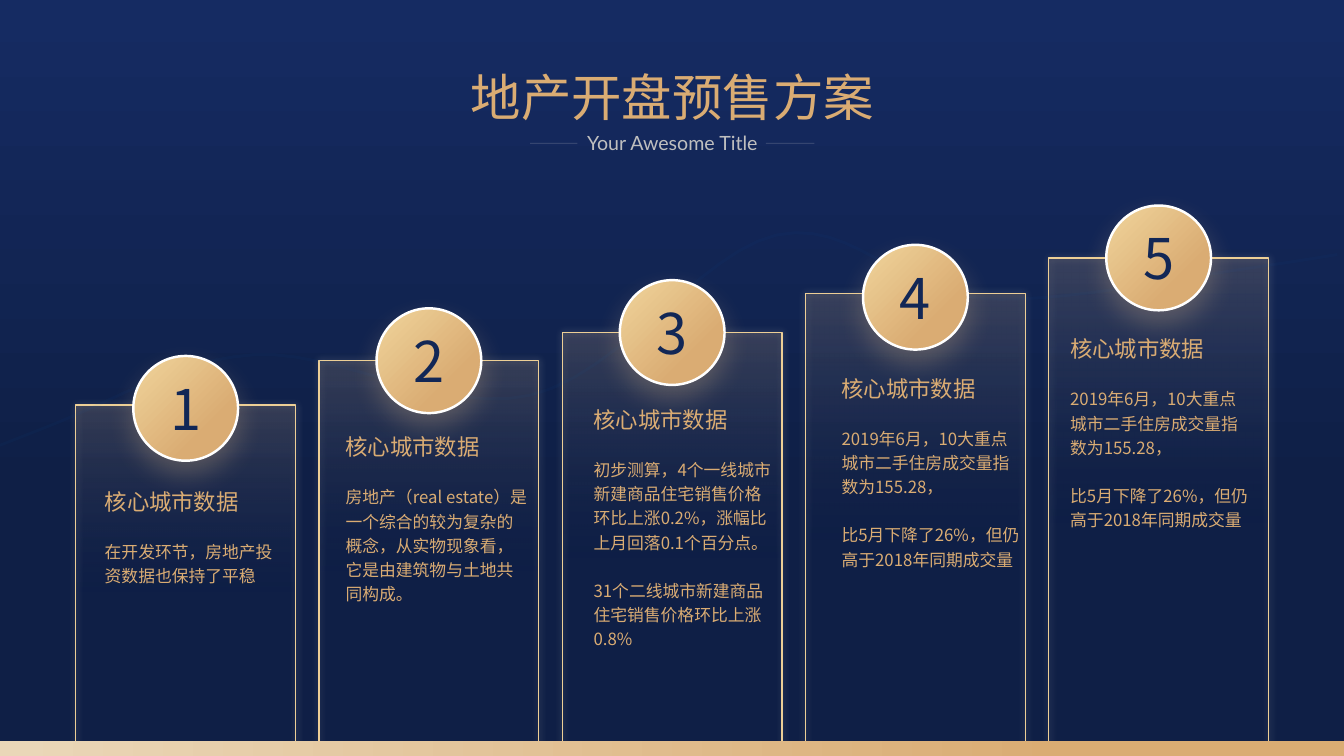
"""Builds the five-step property pre-sale slide."""
import lxml.etree
import pptx
import pptx.dml.color
import pptx.enum.shapes
import pptx.enum.text
import pptx.oxml.ns
import pptx.util

Cm = pptx.util.Cm
Pt = pptx.util.Pt
RGBColor = pptx.dml.color.RGBColor
qn = pptx.oxml.ns.qn
SHAPE = pptx.enum.shapes.MSO_SHAPE
CENTER = pptx.enum.text.PP_ALIGN.CENTER

SKY = RGBColor(0x15, 0x2B, 0x62)
NIGHT = RGBColor(0x0F, 0x1F, 0x46)
PANEL_BLUE = RGBColor(0x0F, 0x24, 0x51)
NUMBER_BLUE = RGBColor(0x12, 0x27, 0x56)
WAVE_BLUE = RGBColor(0x06, 0x6D, 0xCA)
GOLD = RGBColor(0xDA, 0xAC, 0x73)
LIGHT_GOLD = RGBColor(0xED, 0xCF, 0x96)
PALE_GOLD = RGBColor(0xEA, 0xD7, 0xB8)
GLOW_GOLD = RGBColor(0xFB, 0xD0, 0x95)
WHITE = RGBColor(0xFF, 0xFF, 0xFF)
SILVER = RGBColor(0xBF, 0xBF, 0xBF)
RULE_GREY = RGBColor(0xD9, 0xD9, 0xD9)

SLIDE_WIDTH, SLIDE_HEIGHT = 33.87, 19.05
PANEL_LEFT, PANEL_PITCH, PANEL_WIDTH = 1.91, 6.13, 5.54
BADGE_SIZE = 2.64
HEADING = "核心城市数据"
CITY_SALES = ["2019年6月，10大重点城市二手住房成交量指数为155.28，",
              "比5月下降了26%，但仍高于2018年同期成交量"]

# panel top, badge top, text left, heading top, body height, body
STEPS = [
    (10.21, 8.97, 2.39, 12.17, 1.45, ["在开发环节，房地产投资数据也保持了平稳"]),
    (9.09, 7.77, 8.46, 10.8, 3.28,
     ["房地产（real estate）是一个综合的较为复杂的概念，从实物现象看，"
      "它是由建筑物与土地共同构成。"]),
    (8.38, 7.06, 14.71, 10.11, 5.13,
     ["初步测算，4个一线城市新建商品住宅销售价格环比上涨0.2%，"
      "涨幅比上月回落0.1个百分点。",
      "31个二线城市新建商品住宅销售价格环比上涨0.8%"]),
    (7.39, 6.17, 20.96, 9.32, 3.89, CITY_SALES),
    (6.5, 5.18, 26.72, 8.33, 3.89, CITY_SALES),
]

WAVE_START = (0, 11.22)
WAVE_BEND = (1.02, 10.82)
WAVE_CURVES = [
    ((3.1, 10.03), (4.32, 9.09), (6.38, 8.94)),
    ((8.43, 8.79), (11.18, 10.46), (13.36, 9.96)),
    ((15.57, 9.47), (17.7, 6.32), (19.58, 5.92)),
    ((21.49, 5.51), (22.66, 7.39), (24.69, 7.52)),
    ((26.72, 7.65), (29.31, 7.06), (31.8, 6.71)),
    ((34.29, 6.35), (36.98, 5.84), (39.65, 5.33)),
]


def wave_points(steps=12):
    """Return the points of the wave that lie on the slide."""
    points = [WAVE_BEND]
    start = WAVE_BEND
    for first, second, end in WAVE_CURVES:
        for step in range(1, steps + 1):
            t = step / steps
            weights = ((1 - t) ** 3, 3 * t * (1 - t) ** 2, 3 * t * t * (1 - t), t ** 3)
            corners = (start, first, second, end)
            points.append(tuple(sum(w * corner[axis] for w, corner in zip(weights, corners))
                                for axis in (0, 1)))
        start = end
    return [point for point in points if point[0] <= SLIDE_WIDTH]


class SlideBuilder:
    """Holds the slide and its style and draws each kind of element."""

    def __init__(self, slide, font):
        self.slide = slide
        self.font = font

    def alpha(self, color, percent):
        lxml.etree.SubElement(color, qn("a:alpha"), val=str(percent * 1000))

    def gradient(self, fill, stops, angle):
        fill.gradient()
        fill.gradient_angle = 360 - angle
        for stop, (position, color) in zip(fill.gradient_stops, stops):
            stop.position = position / 100
            stop.color.rgb = color

    def background(self, stops, angle):
        self.gradient(self.slide.background.fill, stops, angle)

    def block(self, kind, box, stops, angle, outline=None, glow=None, alphas=()):
        shape = self.slide.shapes.add_shape(kind, *map(Cm, box))
        self.gradient(shape.fill, stops, angle)
        properties = shape._element.spPr
        for color, percent in zip(properties.findall(".//" + qn("a:srgbClr")), alphas):
            self.alpha(color, percent)
        if outline:
            shape.line.color.rgb, shape.line.width = outline[0], Pt(outline[1])
        else:
            shape.line.fill.background()
        shape.shadow.inherit = False
        if glow:
            color, opacity, blur, distance, direction = glow
            shadow = lxml.etree.SubElement(
                properties.find(qn("a:effectLst")), qn("a:outerShdw"),
                blurRad=str(Pt(blur)), dist=str(Pt(distance)),
                dir=str(direction * 60000), algn="ctr", rotWithShape="0")
            tint = lxml.etree.SubElement(shadow, qn("a:srgbClr"), val=str(color))
            self.alpha(tint, opacity)

    def wave(self, start, points, color, width, opacity):
        outline = self.slide.shapes.build_freeform(Cm(start[0]), Cm(start[1]))
        outline.add_line_segments([(Cm(x), Cm(y)) for x, y in points], close=False)
        curve = outline.convert_to_shape()
        curve.fill.background()
        curve.shadow.inherit = False
        self.stroke(curve, color, width, opacity)

    def rule(self, left, right, y, color, width, opacity):
        line = self.slide.shapes.add_connector(
            pptx.enum.shapes.MSO_CONNECTOR.STRAIGHT, Cm(left), Cm(y), Cm(right), Cm(y))
        self.stroke(line, color, width, opacity)
        lxml.etree.SubElement(line._element.spPr, qn("a:effectLst"))

    def stroke(self, shape, color, width, opacity):
        shape.line.color.rgb = color
        shape.line.width = Pt(width)
        line = shape._element.spPr.find(qn("a:ln"))
        self.alpha(line.find(".//" + qn("a:srgbClr")), opacity)

    def text(self, box, paragraphs, size, color=None, font=None, align=None,
             wrap=True, spacing=None, gap=0, stops=None):
        frame = self.slide.shapes.add_textbox(*map(Cm, box)).text_frame
        frame.word_wrap = wrap
        frame.auto_size = pptx.enum.text.MSO_AUTO_SIZE.SHAPE_TO_FIT_TEXT
        frame.text = "\n".join(paragraphs)
        for index, paragraph in enumerate(frame.paragraphs):
            paragraph.alignment = align
            paragraph.line_spacing = spacing
            if index:
                paragraph.space_before = Pt(gap)
            for run in paragraph.runs:
                run.font.size = Pt(size)
                run.font.name = font or self.font
                if stops:
                    self.gradient(run.font.fill, stops, 90)
                else:
                    run.font.color.rgb = color
                lxml.etree.SubElement(run._r.rPr, qn("a:ea"), typeface=font or self.font)


def main():
    """Draw the slide and save it."""
    deck = pptx.Presentation()
    deck.slide_width, deck.slide_height = Cm(SLIDE_WIDTH), Cm(SLIDE_HEIGHT)
    page = SlideBuilder(deck.slides.add_slide(deck.slide_layouts[6]), "Noto Sans CJK SC")
    page.background([(1, SKY), (65, NIGHT)], 90)

    for index, (panel_top, *_) in enumerate(STEPS):
        page.block(SHAPE.RECTANGLE,
                   (PANEL_LEFT + index * PANEL_PITCH, panel_top,
                    PANEL_WIDTH, SLIDE_HEIGHT - panel_top),
                   [(0, GOLD), (54, PANEL_BLUE)], 90, (LIGHT_GOLD, 1),
                   (SILVER, 40, 5, 0, 0), alphas=(15, 0))

    page.wave(WAVE_START, wave_points(), WAVE_BLUE, 2, 3)

    for index, (_, badge_top, text_left, heading_top, body_height, body) in enumerate(STEPS):
        badge_left = PANEL_LEFT + index * PANEL_PITCH + (PANEL_WIDTH - BADGE_SIZE) / 2
        page.block(SHAPE.OVAL, (badge_left, badge_top, BADGE_SIZE, BADGE_SIZE),
                   [(9, LIGHT_GOLD), (71, GOLD)], 45, (WHITE, 1.75),
                   (GLOW_GOLD, 23, 20, 9, 90))
        page.text((badge_left + 0.63, badge_top + 0.34, 1.38, 1.96), [str(index + 1)],
                  40, NUMBER_BLUE, align=CENTER, wrap=False)
        page.text((text_left, heading_top + 1.25, 5.08, body_height), body,
                  12, GOLD, spacing=1.2, gap=17.3)
        page.text((text_left, heading_top, 6.02, 0.94), [HEADING], 16, GOLD)

    page.text((6.38, 1.55, 21.13, 1.8), ["地产开盘预售方案"], 36, align=CENTER,
              stops=[(1, GOLD), (74, PALE_GOLD)])
    page.text((10.19, 3.18, 13.51, 0.86), ["Your Awesome Title"], 14, SILVER,
              font="Lato", align=CENTER)
    for left, right in ((13.36, 14.55), (19.3, 20.52)):
        page.rule(left, right, 3.61, RULE_GREY, 0.5, 25)
    page.block(SHAPE.RECTANGLE, (0, 18.67, SLIDE_WIDTH, 0.38),
               [(1, PALE_GOLD), (79, GOLD)], 0)
    deck.save("out.pptx")


if __name__ == "__main__":
    main()
